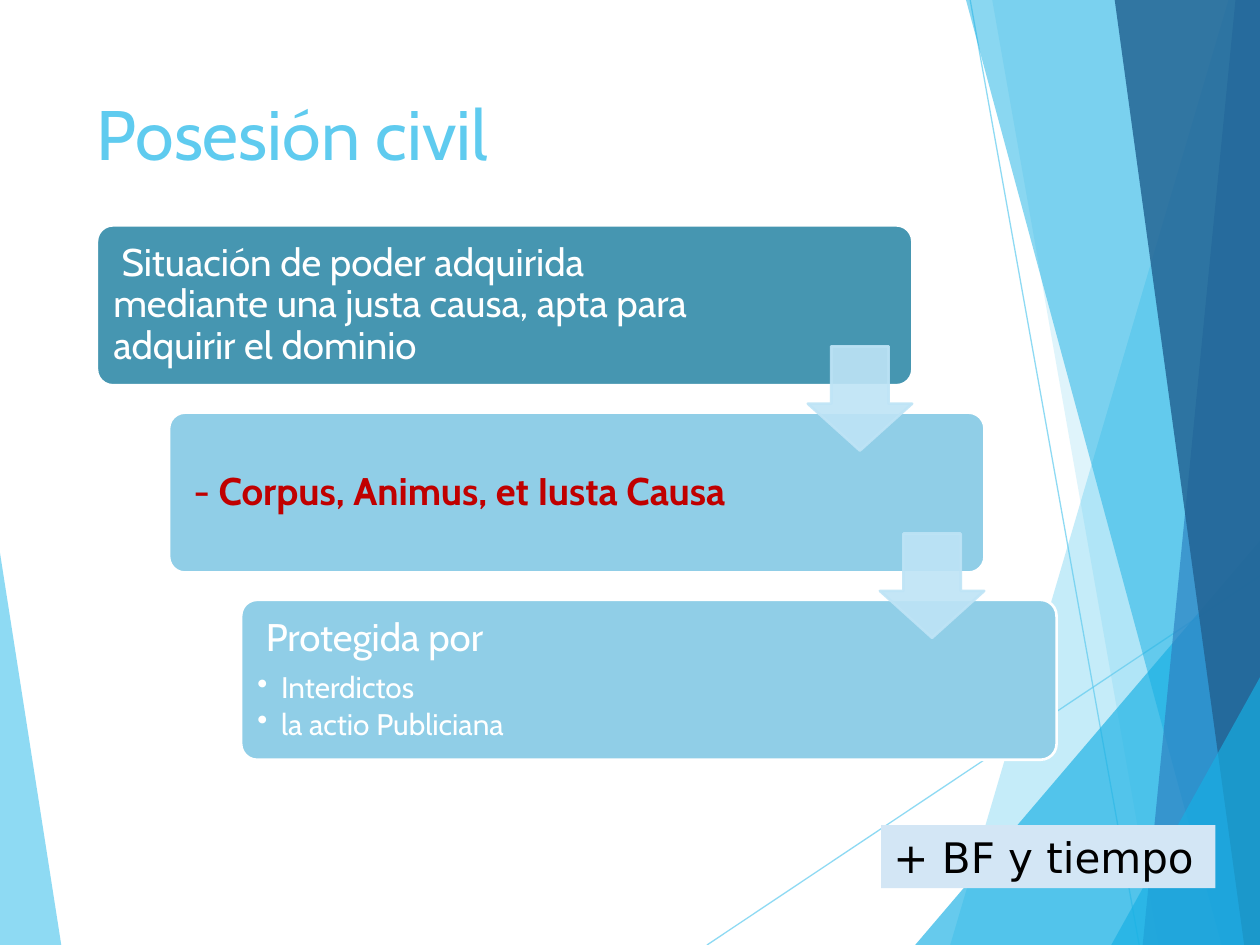
from lxml import etree
from pptx import Presentation
from pptx.dml.color import RGBColor
from pptx.enum.shapes import MSO_CONNECTOR, MSO_SHAPE
from pptx.enum.text import MSO_ANCHOR, PP_ALIGN
from pptx.oxml.ns import qn
from pptx.util import Pt

COLORS = {
    "sky": "5FCBEF", "cyan": "17B0E4", "blue": "2E83C3", "navy": "226292",
    "teal": "4696B1", "card": "90CEE7", "arrow": "BEE4F6", "note": "D3E6F5",
    "white": "FFFFFF", "red": "C00000", "black": "000000",
}


def paint(color_format, color, opacity=100):
    """Make a fill or a line solid, with an opacity in percent."""
    color_format.solid()
    color_format.fore_color.rgb = RGBColor.from_string(COLORS[color])
    if opacity < 100:
        color_element = color_format._xPr.find(qn("a:solidFill"))[0]
        etree.SubElement(color_element, qn("a:alpha"), val=str(opacity * 1000))


def style_run(run, size, color, font="Cabin", bold=None):
    run.font.name = font
    run.font.size = Pt(size)
    run.font.bold = bold
    run.font.color.rgb = RGBColor.from_string(COLORS[color])


presentation = Presentation()
presentation.slide_width, presentation.slide_height = Pt(720), Pt(540)
slide = presentation.slides.add_slide(presentation.slide_layouts[5])
shapes = slide.shapes

# Background: facets and two thin lines
facets = [
    ([(0, 316), (35.3, 540), (0, 540)], "sky", 70),
    ([(702, 0), (543, 540), (720, 540), (720, 0)], "sky", 36),
    ([(567.4, 0), (661.7, 540), (720, 540), (720, 0)], "sky", 20),
    ([(522.7, 540), (720, 309), (720, 540)], "cyan", 66),
    ([(552.2, 0), (698.4, 540), (720, 540), (720, 0)], "cyan", 50),
    ([(706.3, 0), (653, 540), (720, 540), (720, 0)], "blue", 70),
    ([(637.4, 0), (711.4, 540), (720, 540), (720, 0)], "navy", 82),
    ([(635, 540), (720, 387), (720, 540)], "cyan", 66),
]
rays = [(404, 540, 720, 329), (554.4, 0, 651, 540)]

for number, (points, color, opacity) in enumerate(facets):
    builder = shapes.build_freeform(*points[0], scale=Pt(1))
    builder.add_line_segments(points[1:], close=True)
    facet = builder.convert_to_shape()
    facet.shadow.inherit = False
    facet.line.fill.background()
    paint(facet.fill, color, opacity)
    if number == 0:
        for ends in rays:
            ray = shapes.add_connector(MSO_CONNECTOR.STRAIGHT, *map(Pt, ends))
            ray.line.width = Pt(0.75)
            paint(ray.line.fill, "sky", 70)
            etree.SubElement(ray._element.spPr, qn("a:effectLst"))

# Title
title = shapes.title
title.left, title.top, title.width, title.height = Pt(48), Pt(48), Pt(500), Pt(104)
title.text_frame.text = "Posesión civil"
title.text_frame.vertical_anchor = MSO_ANCHOR.TOP
title.text_frame.paragraphs[0].alignment = PP_ALIGN.LEFT
style_run(title.text_frame.paragraphs[0].runs[0], 40, "sky")

# Note
note = shapes.add_shape(MSO_SHAPE.RECTANGLE, Pt(503.5), Pt(471.5), Pt(191), Pt(36))
note.shadow.inherit = False
note.line.fill.background()
paint(note.fill, "note")
note.text_frame.text = "+ BF y tiempo"
note.text_frame.word_wrap = False
note.text_frame.paragraphs[0].alignment = PP_ALIGN.LEFT
style_run(note.text_frame.paragraphs[0].runs[0], 24, "black", "DejaVu Sans")

# Staircase of cards: fill, text width, heading runs (text, color, bold), bullets
STEP_X, STEP_Y = 41.2, 107
cards = [
    ("teal", 366.5,
     [("Situación de poder adquirida mediante una justa causa, "
       "apta para adquirir el dominio", "white", None)], []),
    ("card", 359,
     [("- ", "red", None), ("Corpus, Animus, et Iusta Causa", "red", True)], []),
    ("card", 359,
     [("Protegida por", "white", None)], ["Interdictos", "la actio Publiciana"]),
]
for number, (color, text_width, heading, bullets) in enumerate(cards):
    left, top = 55.4 + number * STEP_X, 128.8 + number * STEP_Y
    card = shapes.add_shape(
        MSO_SHAPE.ROUNDED_RECTANGLE, Pt(left), Pt(top), Pt(466), Pt(91.4))
    card.adjustments[0] = 0.1
    card.shadow.inherit = False
    paint(card.fill, color)
    paint(card.line.fill, "white")
    card.line.width = Pt(1.5)

    text_box = shapes.add_textbox(
        Pt(left + 2.7), Pt(top + 2.7), Pt(text_width), Pt(86))
    frame = text_box.text_frame
    frame.word_wrap = True
    frame.vertical_anchor = MSO_ANCHOR.MIDDLE
    frame.margin_left = frame.margin_right = Pt(6.6)
    frame.margin_top = frame.margin_bottom = Pt(6.6)

    paragraph = frame.paragraphs[0]
    paragraph.line_spacing = 0.9
    paragraph.space_after = Pt(7.7)
    paragraph._p.get_or_add_pPr().set("indent", str(Pt(4.8)))
    for text, run_color, bold in heading:
        run = paragraph.add_run()
        run.text = text
        style_run(run, 22, run_color, bold=bold)

    for bullet in bullets:
        paragraph = frame.add_paragraph()
        paragraph.text = bullet
        paragraph.level = 1
        paragraph.line_spacing = 0.9
        paragraph.space_after = Pt(2.55)
        style_run(paragraph.runs[0], 17, "white")
        properties = paragraph._p.get_or_add_pPr()
        properties.set("marL", str(Pt(13.5)))
        properties.set("indent", str(Pt(-13.5)))
        etree.SubElement(properties, qn("a:buChar"), char="•")

# Arrows between the cards
for number in range(len(cards) - 1):
    arrow = shapes.add_shape(
        MSO_SHAPE.DOWN_ARROW, Pt(461.6 + number * STEP_X),
        Pt(197.9 + number * STEP_Y), Pt(59.6), Pt(59.6))
    arrow.adjustments[0], arrow.adjustments[1] = 0.55, 0.45
    arrow.shadow.inherit = False
    paint(arrow.fill, "arrow", 90)
    paint(arrow.line.fill, "arrow", 90)
    arrow.line.width = Pt(1.5)

presentation.save("out.pptx")
